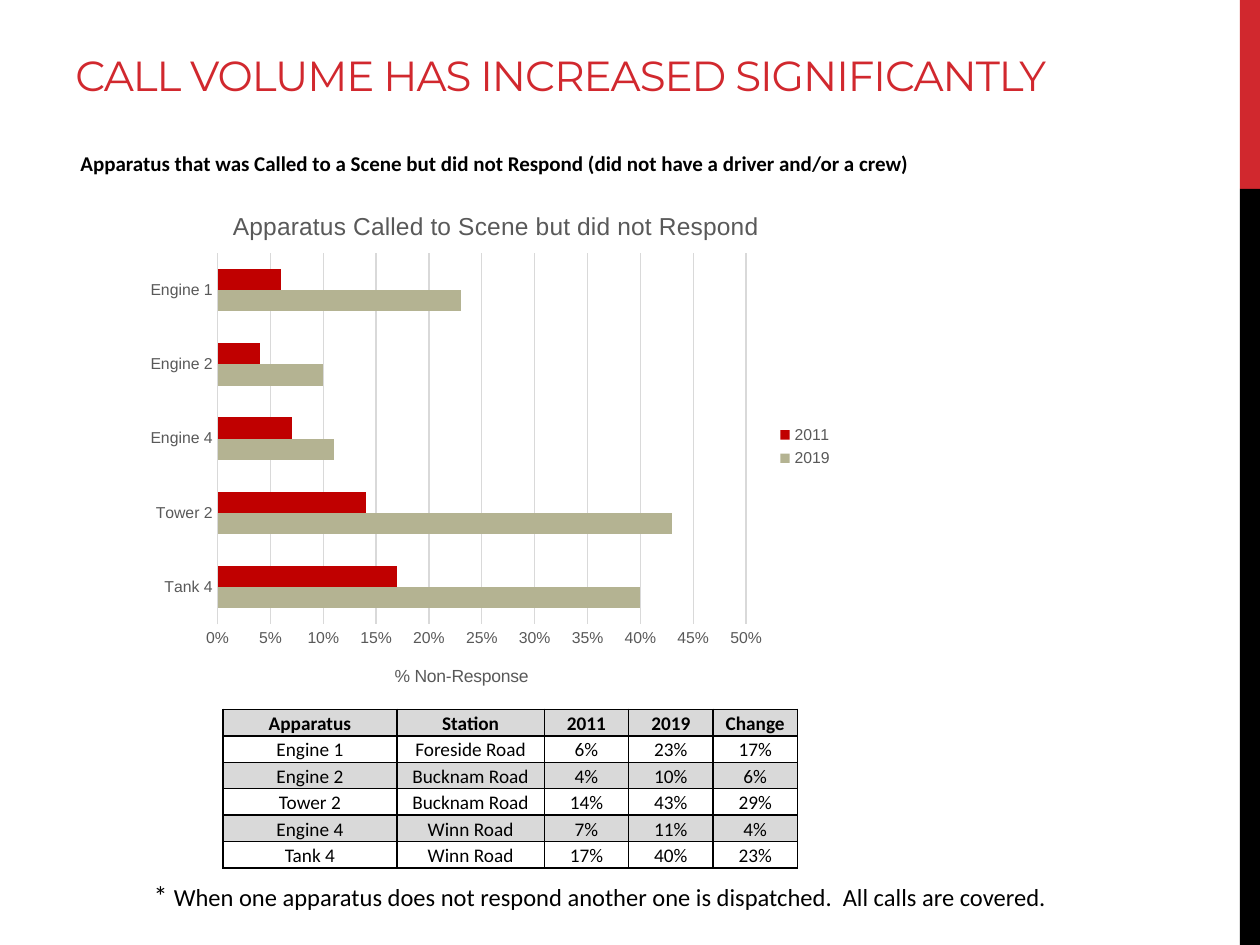
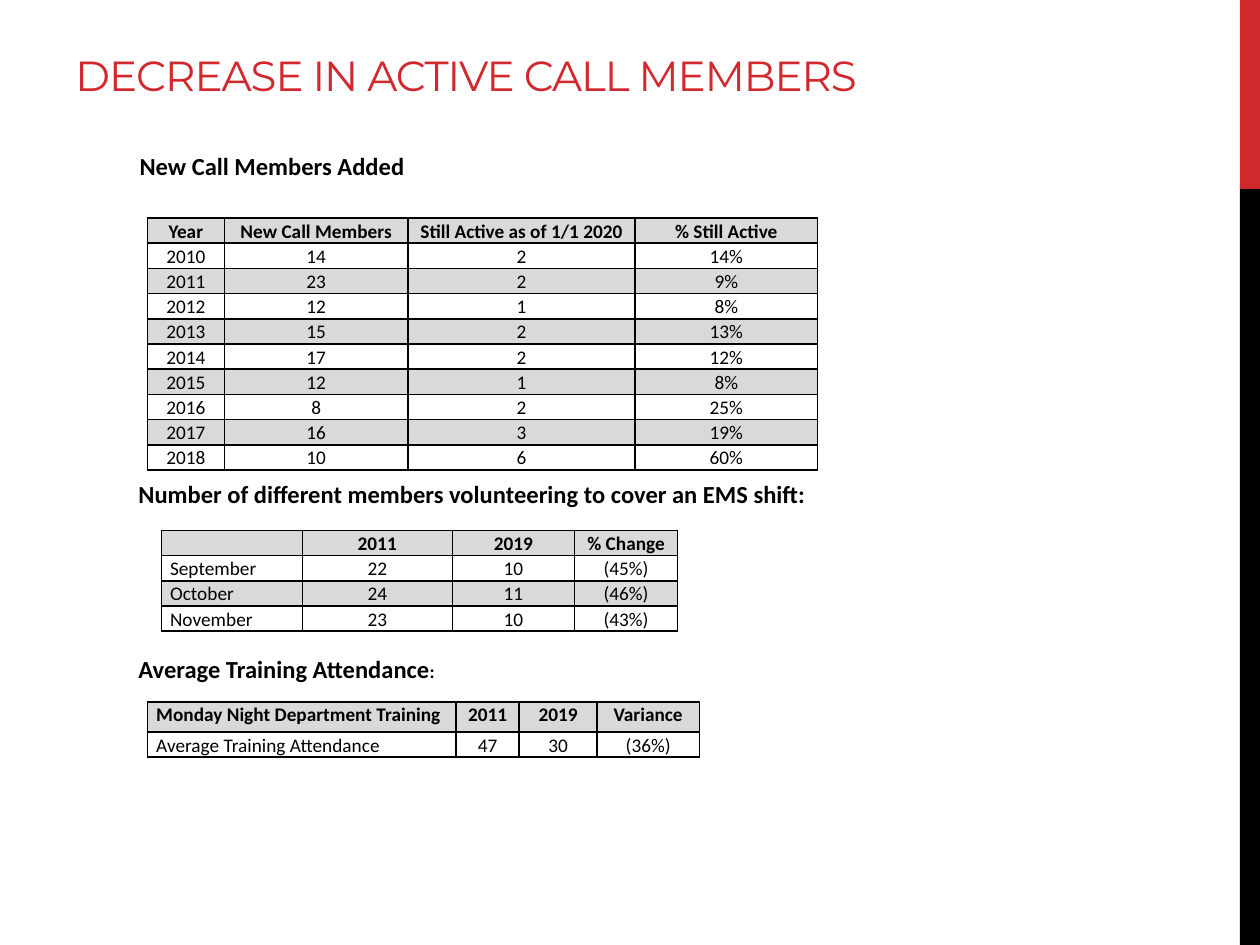
"""Builds two slides on fire department call volume and call membership."""
from lxml import etree
from pptx import Presentation
from pptx import util as u
from pptx.chart.data import CategoryChartData
from pptx.dml.color import RGBColor
from pptx.enum import chart as ch, shapes, text
from pptx.oxml import ns

COLORS = {"red": "D1282E", "black": "000000", "shade": "D9D9D9", "white": "FFFFFF",
          "grey": "595959", "bar_2011": "C00000", "bar_2019": "B4B392"}
BODY, HEADING, CHART_FONT = "Calibri", "Montserrat", "Arial"
BANDS = [("red", 0, 1.5), ("black", 1.5, 6)]
ANCHOR, ALIGN = text.MSO_ANCHOR, text.PP_ALIGN

NON_RESPONSE = {
    "title": "Apparatus Called to Scene but did not Respond",
    "axis": "% Non-Response",
    "units": ["Tank 4", "Tower 2", "Engine 4", "Engine 2", "Engine 1"],
    "years": {"2019": [0.4, 0.43, 0.11, 0.1, 0.23],
              "2011": [0.17, 0.14, 0.07, 0.04, 0.06]},
}

SLIDES = [
    {
        "title": "CALL VOLUME HAS INCREASED SIGNIFICANTLY",
        "notes": [
            ((0.54, 1.13, 7, 0.31),
             [("Apparatus that was Called to a Scene but did not Respond "
               "(did not have a driver and/or a crew)", 12)],
             {"bold": True, "spacing": 1.07, "after": 8}),
            ((1.12, 6.92, 7.92, 0.37),
             [("* ", 16), ("When one apparatus does not respond another one is "
                           "dispatched.  All calls are covered.", 14)], {}),
        ],
        "chart": ((1.08, 1.47, 5.63, 4.15), NON_RESPONSE),
        "tables": [
            {"at": (1.77, 5.63), "widths": [1.38, 1.17, 0.67, 0.67, 0.67],
             "heights": [0.21] * 6, "anchor": ANCHOR.BOTTOM, "rows": [
                ("Apparatus", "Station", "2011", "2019", "Change"),
                ("Engine 1", "Foreside Road", "6%", "23%", "17%"),
                ("Engine 2", "Bucknam Road", "4%", "10%", "6%"),
                ("Tower 2", "Bucknam Road", "14%", "43%", "29%"),
                ("Engine 4", "Winn Road", "7%", "11%", "4%"),
                ("Tank 4", "Winn Road", "17%", "40%", "23%")]},
        ],
    },
    {
        "title": "DECREASE IN ACTIVE CALL MEMBERS",
        "notes": [
            ((1.01, 1.15, 2.5, 0.34), [("New Call Members Added", 14)], {"bold": True}),
            ((1, 3.75, 6.58, 0.34),
             [("Number of different members volunteering to cover an EMS shift:", 14)],
             {"bold": True}),
            ((1, 5.14, 7.83, 0.34), [("Average Training Attendance", 14), (":", 10.5)],
             {"bold": True, "anchor": ANCHOR.MIDDLE}),
        ],
        "tables": [
            {"at": (1.17, 1.73), "widths": [0.61, 1.46, 1.8, 1.45],
             "heights": [0.2] * 10, "rows": [
                ("Year", "New Call Members", "Still Active as of 1/1 2020", "% Still Active"),
                ("2010", "14", "2", "14%"),
                ("2011", "23", "2", "9%"),
                ("2012", "12", "1", "8%"),
                ("2013", "15", "2", "13%"),
                ("2014", "17", "2", "12%"),
                ("2015", "12", "1", "8%"),
                ("2016", "8", "2", "25%"),
                ("2017", "16", "3", "19%"),
                ("2018", "10", "6", "60%")]},
            {"at": (1.28, 4.21), "widths": [1.12, 1.19, 0.97, 0.82],
             "heights": [0.2] * 4, "labels": ALIGN.LEFT, "rows": [
                ("", "2011", "2019", "% Change"),
                ("September", "22", "10", "(45%)"),
                ("October", "24", "11", "(46%)"),
                ("November", "23", "10", "(43%)")]},
            {"at": (1.17, 5.57), "widths": [2.45, 0.5, 0.62, 0.81],
             "heights": [0.24, 0.2], "labels": ALIGN.LEFT, "rows": [
                ("Monday Night Department Training", "2011", "2019", "Variance"),
                ("Average Training Attendance", "47", "30", "(36%)")]},
        ],
    },
]


def rgb(name):
    return RGBColor.from_string(COLORS[name])


def inches(values):
    return [u.Inches(value) for value in values]


def style(font, size, color="black", face=BODY, bold=False):
    font.size, font.name, font.bold = u.Pt(size), face, bold
    font.color.rgb = rgb(color)


def write(frame, runs, color="black", face=BODY, bold=False, align=ALIGN.LEFT,
          anchor=ANCHOR.TOP, spacing=None, after=0, tracking=None):
    frame.word_wrap = True
    frame.vertical_anchor = anchor
    line = frame.paragraphs[0]
    line.alignment, line.line_spacing, line.space_after = align, spacing, u.Pt(after)
    for words, size in runs:
        if not words:
            etree.SubElement(line._p, ns.qn("a:endParaRPr"), sz=str(size * 100))
            continue
        run = line.add_run()
        run.text = words
        style(run.font, size, color, face, bold)
        if tracking:
            run.font._element.set("spc", str(tracking))


def add_text(slide, place, runs, **form):
    write(slide.shapes.add_textbox(*inches(place)).text_frame, runs, **form)


def add_frame(slide, title):
    for color, top, height in BANDS:
        band = slide.shapes.add_shape(shapes.MSO_SHAPE.RECTANGLE,
                                      *inches((9.84, top, 0.16, height)))
        band.shadow.inherit = False
        band.fill.solid()
        band.fill.fore_color.rgb = rgb(color)
        band.line.fill.background()
    add_text(slide, (0.5, 0.17, 9.08, 0.67), [(title, 24)], color="red", face=HEADING,
             anchor=ANCHOR.BOTTOM, tracking=-60)


def border(cell):
    props = cell._tc.get_or_add_tcPr()
    for place, side in enumerate(("lnL", "lnR", "lnT", "lnB")):
        edge = etree.Element(ns.qn("a:" + side), w=str(u.Pt(1)))
        fill = etree.SubElement(edge, ns.qn("a:solidFill"))
        etree.SubElement(fill, ns.qn("a:srgbClr"), val=COLORS["black"])
        props.insert(place, edge)


def add_table(slide, at, widths, heights, rows, labels=ALIGN.CENTER, anchor=ANCHOR.TOP):
    size = (sum(widths), sum(heights))
    grid = slide.shapes.add_table(len(rows), len(widths), *inches(at + size)).table
    for column, width in zip(grid.columns, widths):
        column.width = u.Inches(width)
    for r, (entries, height) in enumerate(zip(rows, heights)):
        grid.rows[r].height = u.Inches(height)
        for c, entry in enumerate(entries):
            cell = grid.cell(r, c)
            cell.margin_left = cell.margin_right = u.Inches(0.07)
            cell.margin_top = cell.margin_bottom = 0
            cell.fill.solid()
            cell.fill.fore_color.rgb = rgb("white" if r % 2 else "shade")
            border(cell)
            write(cell.text_frame, [(entry, 11)], bold=r == 0, spacing=1.07,
                  align=ALIGN.CENTER if c else labels)
            cell.vertical_anchor = anchor


def set_layout(part, **place):
    layout = part.find(ns.qn("c:layout"))
    if layout is None:
        layout = etree.Element(ns.qn("c:layout"))
        text_part = part.find(ns.qn("c:tx"))
        part.insert(0 if text_part is None else 1, layout)
    manual = etree.SubElement(layout, ns.qn("c:manualLayout"))
    if "w" in place:
        etree.SubElement(manual, ns.qn("c:layoutTarget"), val="inner")
    for key in ("x", "y"):
        etree.SubElement(manual, ns.qn(f"c:{key}Mode"), val="edge")
    for key, value in place.items():
        etree.SubElement(manual, ns.qn("c:" + key), val=str(value))


def set_title(owner, words, size, **place):
    owner.has_title = True
    frame = owner.chart_title if hasattr(owner, "chart_title") else owner.axis_title
    write(frame.text_frame, [(words, size)], color="grey", face=CHART_FONT,
          align=ALIGN.CENTER)
    set_layout(frame._element, **place)


def add_chart(slide, place, content):
    data = CategoryChartData(number_format="0%")
    data.categories = content["units"]
    for year, shares in content["years"].items():
        data.add_series(year, shares)
    chart = slide.shapes.add_chart(ch.XL_CHART_TYPE.BAR_CLUSTERED, *inches(place), data).chart
    style(chart.font, 10, face=CHART_FONT)
    set_title(chart, content["title"], 14, x=0.13, y=0.04)
    chart.has_legend = True
    chart.legend.position = ch.XL_LEGEND_POSITION.RIGHT
    chart.legend.include_in_layout = False
    style(chart.legend.font, 9, "grey", CHART_FONT)

    plot = chart.plots[0]
    plot.gap_width, plot.overlap, plot.vary_by_categories = 150, 0, False
    set_layout(chart._chartSpace.chart.plotArea, x=0.115, y=0.13, w=0.745, h=0.71)
    for series in plot.series:
        series.format.fill.solid()
        series.format.fill.fore_color.rgb = rgb("bar_" + series.name)

    units, shares = chart.category_axis, chart.value_axis
    for axis in (units, shares):
        axis.major_tick_mark = axis.minor_tick_mark = ch.XL_TICK_MARK.NONE
        style(axis.tick_labels.font, 9, "grey", CHART_FONT)
    shares.minimum_scale, shares.maximum_scale, shares.major_unit = 0, 0.5, 0.05
    shares.tick_labels.number_format = "0%"
    shares.tick_labels.number_format_is_linked = False
    shares.format.line.fill.background()
    for line in (units.format.line, shares.major_gridlines.format.line):
        line.color.rgb, line.width = rgb("shade"), u.Pt(0.75)
    set_title(shares, content["axis"], 10, x=0.36, y=0.91)


def main():
    deck = Presentation()
    deck.slide_width, deck.slide_height = inches((10, 7.5))
    for content in SLIDES:
        slide = deck.slides.add_slide(deck.slide_layouts[6])
        add_frame(slide, content["title"])
        if "chart" in content:
            add_chart(slide, *content["chart"])
        for table in content["tables"]:
            add_table(slide, **table)
        for place, runs, form in content["notes"]:
            add_text(slide, place, runs, **form)
    deck.save("out.pptx")


if __name__ == "__main__":
    main()
